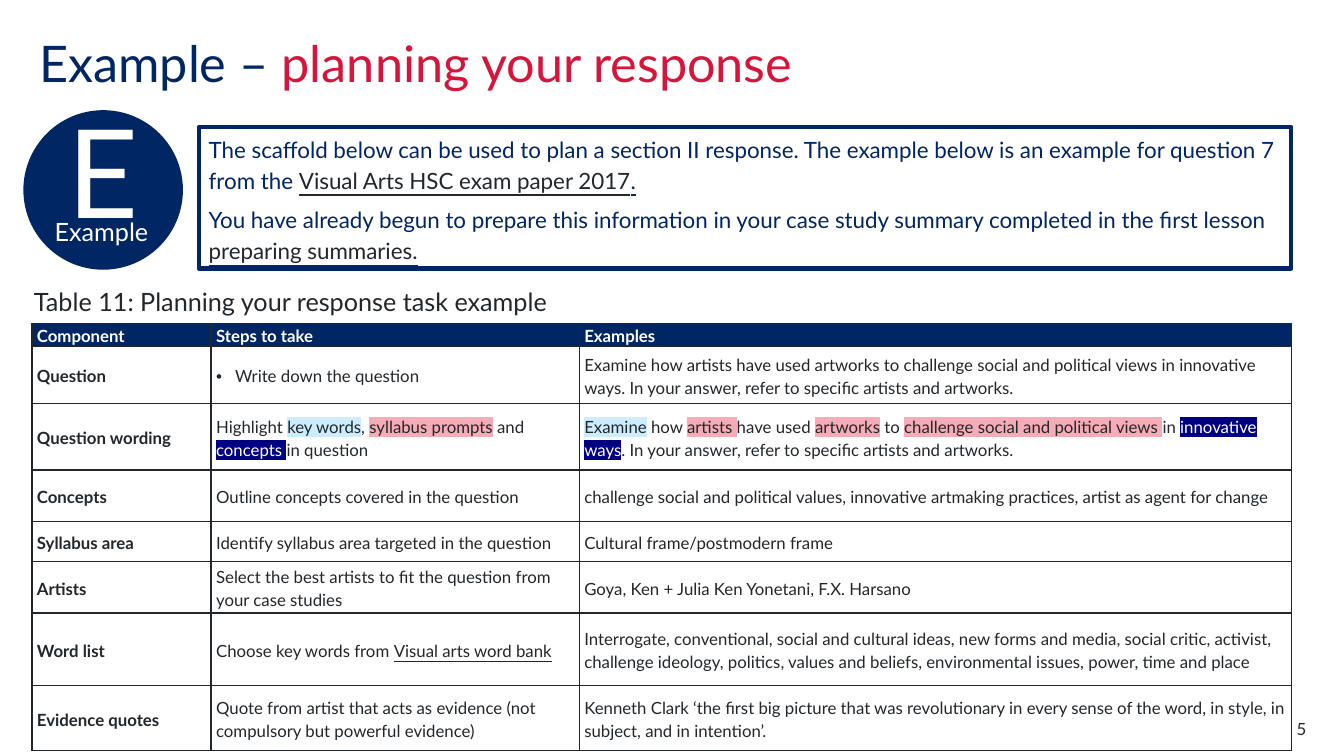
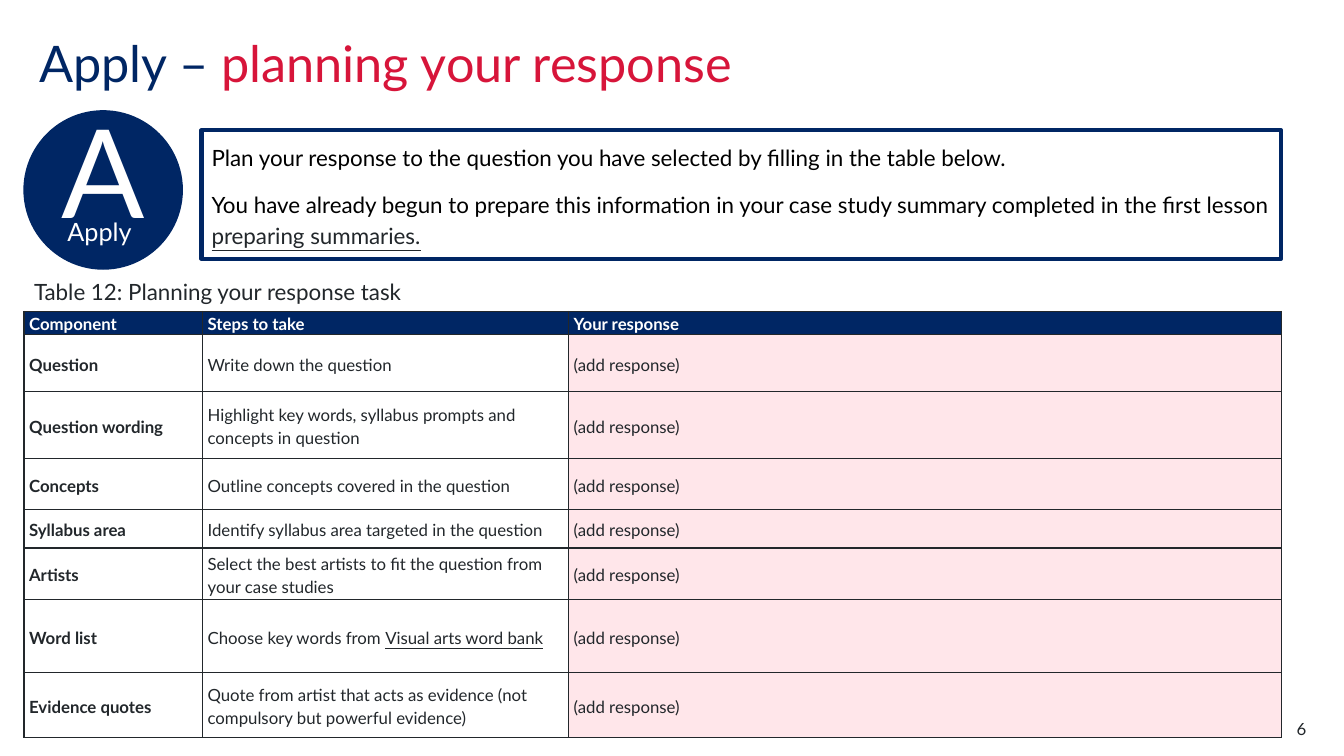
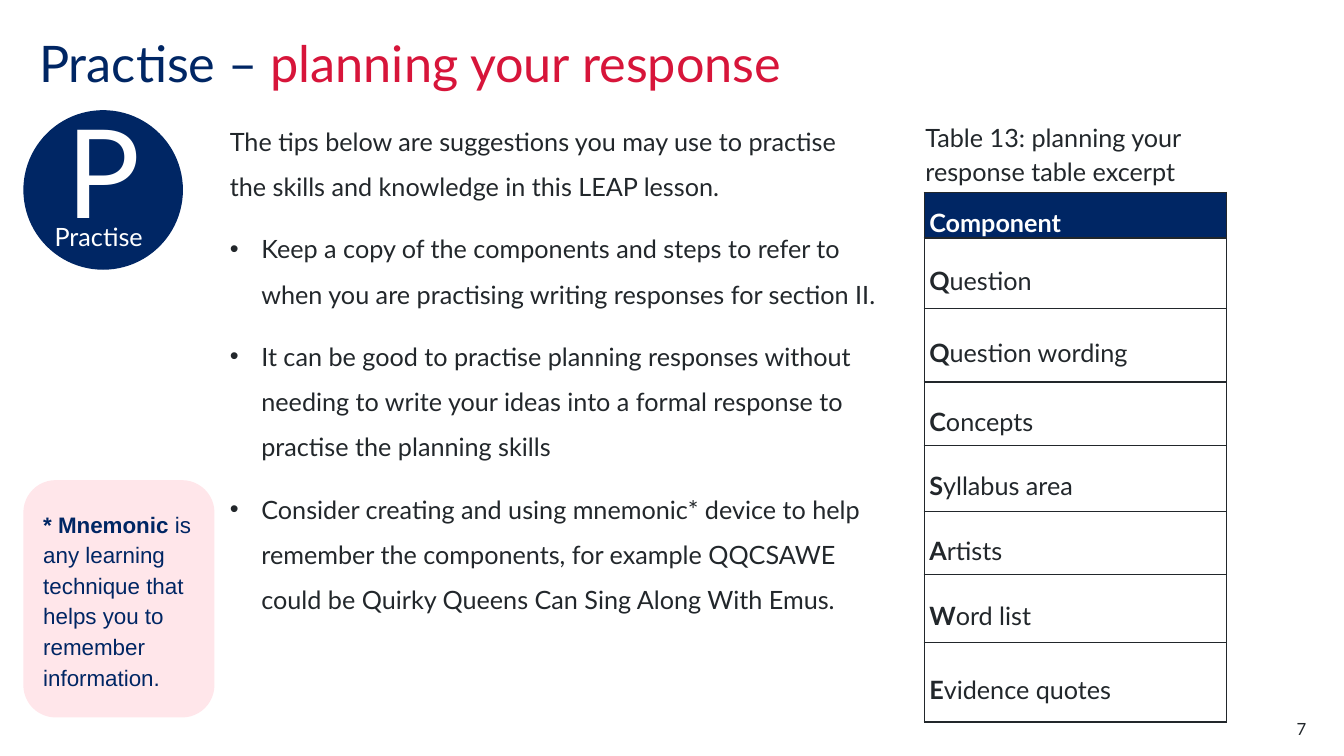
import pptx
import pptx.util
import pptx.dml.color
import pptx.enum.shapes
import pptx.enum.text
import pptx.oxml
import pptx.oxml.ns
from lxml import etree

Pt = pptx.util.Pt
qn = pptx.oxml.ns.qn
SHAPES = pptx.enum.shapes.MSO_SHAPE
ANCHOR = pptx.enum.text.MSO_ANCHOR
ALIGN = pptx.enum.text.PP_ALIGN

# Shared look
COLORS = {
    "navy": "002664", "red": "D7153A", "ink": "22272B", "white": "FFFFFF",
    "black": "000000", "blush": "FFE6EA", "sky": "CBEDFD", "rose": "F6ACB6",
    "deep": "000080",
}
FONT = "Lato"
BOLD = {"bold": True}
LINK = {"color": "ink", "underline": True}
KEY_WORD = {"mark": "sky"}
SYLLABUS = {"mark": "rose"}
CONCEPT = {"mark": "deep", "color": "white"}
MARKED_SPACE = {"mark": "deep"}

# Content: a paragraph is a string or a list of (text, style) runs
TITLE_END = "planning your response"
COMPONENTS = ["Question", "Question wording", "Concepts", "Syllabus area",
              "Artists", "Word list", "Evidence quotes"]
STEPS = [
    "Write down the question",
    "Highlight key words, syllabus prompts and concepts in question",
    "Outline concepts covered in the question",
    "Identify syllabus area targeted in the question",
    "Select the best artists to fit the question from your case studies",
    [("Choose key words from ", {}), ("Visual arts word bank", LINK)],
    "Quote from artist that acts as evidence (not compulsory but powerful evidence)",
]
MARKED_STEP = [
    ("Highlight ", {}), ("key words", KEY_WORD), (", ", {}),
    ("syllabus prompts", SYLLABUS), (" and ", {}), ("concepts", CONCEPT),
    (" ", MARKED_SPACE), ("in question", {}),
]
EXAMPLES = [
    "Examine how artists have used artworks to challenge social and political views "
    "in innovative ways. In your answer, refer to specific artists and artworks.",
    [("Examine", KEY_WORD), (" how ", {}), ("artists ", SYLLABUS), ("have used ", {}),
     ("artworks", SYLLABUS), (" to ", {}),
     ("challenge social and political views ", SYLLABUS), ("in ", {}),
     ("innovative ways", CONCEPT),
     (". In your answer, refer to specific artists and artworks.", {})],
    "challenge social and political values, innovative artmaking practices, "
    "artist as agent for change",
    "Cultural frame/postmodern frame",
    "Goya, Ken + Julia Ken Yonetani, F.X. Harsano",
    "Interrogate, conventional, social and cultural ideas, new forms and media, "
    "social critic, activist, challenge ideology, politics, values and beliefs, "
    "environmental issues, power, time and place",
    "Kenneth Clark ‘the first big picture that was revolutionary in every sense of "
    "the word, in style, in subject, and in intention’.",
]
SUMMARY_NOTE = [
    ("You have already begun to prepare this information in your case study summary "
     "completed in the first lesson ", {}),
    ("preparing summaries.", LINK),
]
EXAMPLE_INTRO = [
    [("The scaffold below can be used to plan a section II response. The example below "
      "is an example for question 7 from the ", {}),
     ("Visual Arts HSC exam paper 2017", LINK), (".", {"underline": True})],
    SUMMARY_NOTE,
]
APPLY_INTRO = [
    "Plan your response to the question you have selected by filling in the table below.",
    SUMMARY_NOTE,
]
TIPS_INTRO = ("The tips below are suggestions you may use to practise the skills and "
              "knowledge in this LEAP lesson.")
TIPS = [
    "Keep a copy of the components and steps to refer to when you are practising "
    "writing responses for section II.",
    "It can be good to practise planning responses without needing to write your ideas "
    "into a formal response to practise the planning skills",
    "Consider creating and using mnemonic* device to help remember the components, for "
    "example QQCSAWE could be Quirky Queens Can Sing Along With Emus.",
]
MNEMONIC = [("* Mnemonic ", BOLD),
            ("is any learning technique that helps you to remember information.", {})]


def rgb(name):
    return pptx.dml.color.RGBColor.from_string(COLORS[name])


def add_run(paragraph, text, size, color, font=FONT, bold=False, underline=False, mark=None):
    run = paragraph.add_run()
    run.text = text
    run.font.size = Pt(size)
    run.font.bold = bold
    run.font.underline = underline
    run.font.color.rgb = rgb(color)
    run.font.name = font
    if mark:
        highlight = etree.Element(qn("a:highlight"))
        etree.SubElement(highlight, qn("a:srgbClr")).set("val", COLORS[mark])
        run.font.fill  # highlight must follow the text fill
        run.font._element.find(qn("a:solidFill")).addnext(highlight)


def fill_paragraph(paragraph, content, spacing=None, align=None, bullet_indent=0, **style):
    if spacing:
        paragraph.line_spacing = spacing
    if align is not None:
        paragraph.alignment = align
    if bullet_indent:
        props = paragraph._p.get_or_add_pPr()
        props.set("marL", str(Pt(bullet_indent)))
        props.set("indent", str(-Pt(bullet_indent)))
        etree.SubElement(props, qn("a:buFont")).set("typeface", "Arial")
        etree.SubElement(props, qn("a:buChar")).set("char", "•")
    runs = [(content, {})] if isinstance(content, str) else content
    for text, own in runs:
        add_run(paragraph, text, **{**style, **own})


def fill_frame(frame, paragraphs, gap=0, bulleted_from=None, bullet_indent=0, **style):
    frame.word_wrap = True
    for i, content in enumerate(paragraphs):
        paragraph = frame.add_paragraph() if i else frame.paragraphs[0]
        if i and gap:
            paragraph.space_before = Pt(gap)
        bulleted = bulleted_from is not None and i >= bulleted_from
        fill_paragraph(paragraph, content,
                       bullet_indent=bullet_indent if bulleted else 0, **style)


def set_insets(frame, left=0, top=0, right=0, bottom=0):
    frame.margin_left, frame.margin_top = Pt(left), Pt(top)
    frame.margin_right, frame.margin_bottom = Pt(right), Pt(bottom)


def add_text(slide, box, paragraphs, inset=True, **style):
    frame = slide.shapes.add_textbox(*map(Pt, box)).text_frame
    if not inset:
        set_insets(frame)
    fill_frame(frame, paragraphs, **style)


def add_panel(slide, preset, box, fill, line, line_width=1):
    panel = slide.shapes.add_shape(preset, *map(Pt, box))
    panel.shadow.inherit = False
    panel.fill.solid()
    panel.fill.fore_color.rgb = rgb(fill)
    panel.line.color.rgb = rgb(line)
    panel.line.width = Pt(line_width)
    panel.text_frame.vertical_anchor = ANCHOR.MIDDLE
    return panel.text_frame


def set_borders(cell, color="ink", width=1):
    props = cell._tc.get_or_add_tcPr()
    for i, side in enumerate(("lnL", "lnR", "lnT", "lnB")):
        border = etree.Element(qn("a:" + side), w=str(Pt(width)))
        fill = etree.SubElement(border, qn("a:solidFill"))
        etree.SubElement(fill, qn("a:srgbClr")).set("val", COLORS[color])
        props.insert(i, border)


def add_grid(slide, left, top, widths, heights, header, columns, size, spacing,
             last_fill="white", bulleted_cell=None):
    """Table with a navy header row; columns holds the body, column by column."""
    table = slide.shapes.add_table(len(heights), len(widths), Pt(left), Pt(top),
                                   Pt(sum(widths)), Pt(sum(heights))).table
    table.horz_banding = False
    for column, width in zip(table.columns, widths):
        column.width = Pt(width)
    for row, height in zip(table.rows, heights):
        row.height = Pt(height)
    for c, body in enumerate(columns):
        for r, content in enumerate([header[c]] + body):
            cell = table.cell(r, c)
            set_insets(cell, left=3.6, right=3.6)
            cell.vertical_anchor = ANCHOR.MIDDLE
            is_last = c > 0 and c == len(columns) - 1
            fill = "navy" if r == 0 else last_fill if is_last else "white"
            cell.fill.solid()
            cell.fill.fore_color.rgb = rgb(fill)
            set_borders(cell)
            fill_paragraph(cell.text_frame.paragraphs[0], content, spacing=spacing,
                           size=size, color="ink" if r else "white",
                           bold=r == 0 or (c == 0 and isinstance(content, str)),
                           bullet_indent=13.5 if (r, c) == bulleted_cell else 0)


def start_slide(prs, number, stage, label_left, label_top=154.8):
    """Title, round badge and page number."""
    slide = prs.slides.add_slide(prs.slide_layouts[5])
    title = slide.shapes.title
    title.left, title.top, title.width, title.height = map(Pt, (28, 28, 793.5, 79))
    frame = title.text_frame
    set_insets(frame)
    frame.auto_size = pptx.enum.text.MSO_AUTO_SIZE.NONE
    frame.vertical_anchor = ANCHOR.TOP
    fill_frame(frame, [[(stage + " – ", {}), (TITLE_END, {"color": "red"})]],
               spacing=0.9, align=ALIGN.LEFT, size=36, color="navy")

    badge = add_panel(slide, SHAPES.OVAL, (17.2, 79.2, 113, 113), "navy", "navy")
    badge.margin_bottom = Pt(32.4)  # lifts the initial above the label
    fill_frame(badge, [stage[0]], align=ALIGN.CENTER, size=88, color="white")
    add_text(slide, (label_left, label_top, 76, 34.5), [stage], inset=False,
             size=18, color="white")
    add_text(slide, (876.2, 513.4, 57, 14.4), [str(number)], inset=False,
             align=ALIGN.RIGHT, size=12, color="ink")
    return slide


def add_intro(slide, box, paragraphs, gap, color):
    frame = add_panel(slide, SHAPES.RECTANGLE, box, "white", "navy", 3)
    fill_frame(frame, paragraphs, gap=gap, spacing=1.15, align=ALIGN.LEFT,
               size=16, color=color)


def example_slide(prs):
    slide = start_slide(prs, 5, "Example", 39)
    add_intro(slide, (142, 90.8, 780.5, 101), EXAMPLE_INTRO, 6, "navy")
    add_text(slide, (17.2, 201, 585, 29), ["Table 11: Planning your response task example"],
             size=18, color="ink")
    steps = [STEPS[0], MARKED_STEP] + STEPS[2:]
    add_grid(slide, 22.8, 230.8, [128, 263, 509], [14.4, 41, 47.5, 36.7, 28.8, 36.7, 52, 46.5],
             ["Component", "Steps to take", "Examples"], [COMPONENTS, steps, EXAMPLES],
             12, 1.14, bulleted_cell=(1, 1))


def apply_slide(prs):
    slide = start_slide(prs, 6, "Apply", 48.2)
    add_intro(slide, (144, 93, 771, 92), APPLY_INTRO, 12, "black")
    add_text(slide, (17.2, 195, 867.5, 26.6), ["Table 12: Planning your response task"],
             size=16, color="ink")
    add_grid(slide, 17.2, 222.5, [127.5, 261.5, 509], [8.6, 41, 47.5, 36.7, 27.4, 36.7, 52.5, 46],
             ["Component", "Steps to take", "Your response"],
             [COMPONENTS, STEPS, ["(add response)"] * len(COMPONENTS)],
             12, 1.14, last_fill="blush")


def practise_slide(prs):
    slide = start_slide(prs, 7, "Practise", 39, 158.4)
    note = add_panel(slide, SHAPES.ROUNDED_RECTANGLE, (17.2, 343.5, 135.5, 168.5),
                     "blush", "blush")
    fill_frame(note, [MNEMONIC], spacing=1.14, align=ALIGN.LEFT, size=16,
               color="navy", font="Arial")
    add_text(slide, (164.2, 79.2, 463, 432), [TIPS_INTRO] + TIPS, inset=False, gap=12,
             bulleted_from=1, bullet_indent=22.5, spacing=1.5, size=18, color="ink")
    add_text(slide, (661, 84.2, 216, 47.5), ["Table 13: planning your response table excerpt"],
             inset=False, spacing=1.14, size=18, color="ink")
    initials = [[(name[0], BOLD), (name[1:], {"bold": False})] for name in COMPONENTS]
    add_grid(slide, 660.2, 137.5, [216], [28, 50.4, 52.6, 45.4, 46.8, 45.4, 48.2, 57],
             ["Component"], [initials], 18, 1.5)


def main():
    prs = pptx.Presentation()
    prs.slide_width, prs.slide_height = Pt(960), Pt(540)
    example_slide(prs)
    apply_slide(prs)
    practise_slide(prs)
    prs.save("out.pptx")


if __name__ == "__main__":
    main()
